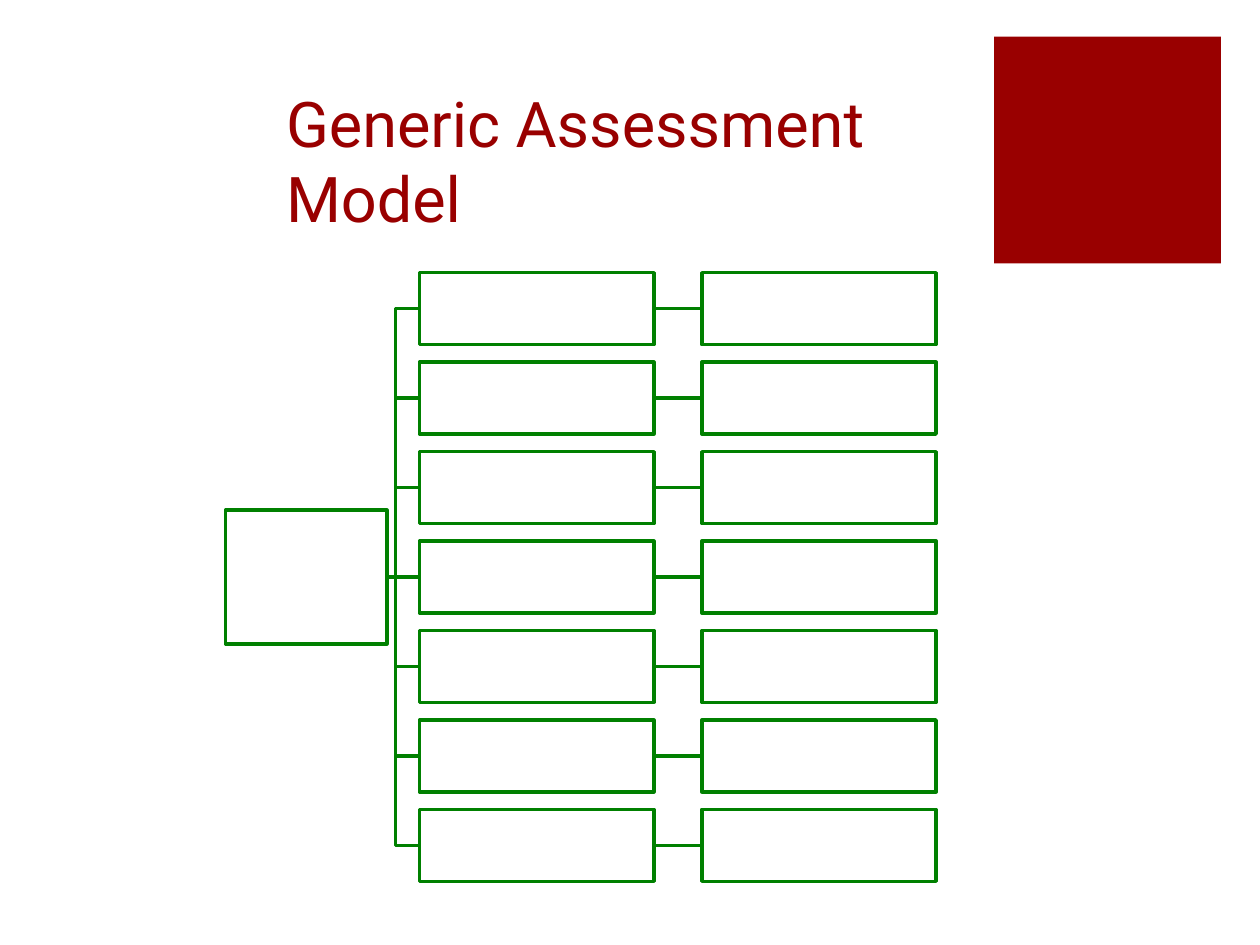
from pptx import Presentation
from pptx.dml.color import RGBColor
from pptx.enum.shapes import MSO_CONNECTOR, MSO_SHAPE
from pptx.enum.text import MSO_ANCHOR, MSO_AUTO_SIZE, PP_ALIGN
from pptx.oxml.ns import qn
from pptx.util import Inches, Pt
from lxml import etree

RECTANGLE = MSO_SHAPE.RECTANGLE
STRAIGHT = MSO_CONNECTOR.STRAIGHT
BOTTOM = MSO_ANCHOR.BOTTOM
LEFT = PP_ALIGN.LEFT
NO_AUTOFIT = MSO_AUTO_SIZE.NONE

COLORS = {"accent": "990000", "outline": "008000", "paper": "FFFFFF"}
FONT = "Roboto"
LINE_WIDTH = 2
TITLE_ONLY = 5

ROWS = 7
FIRST_CENTER, ROW_PITCH = 2.45, 0.71
BOX_WIDTH, BOX_HEIGHT = 1.86, 0.57
FIRST_COLUMN, SECOND_COLUMN = 3.33, 5.57
ROOT_LEFT, ROOT_WIDTH, ROOT_HEIGHT = 1.79, 1.28, 1.06
BRANCH_START, TRUNK = 2.96, 3.14


def color(name):
    return RGBColor.from_string(COLORS[name])


def write_text(frame, text, size=18, fill="accent", align=LEFT, anchor=BOTTOM):
    frame.word_wrap = True
    frame.auto_size = NO_AUTOFIT
    frame.vertical_anchor = anchor
    para = frame.paragraphs[0]
    para.alignment = align
    span = para.add_run()
    span.text = text
    span.font.name = FONT
    span.font.size = Pt(size)
    span.font.color.rgb = color(fill)


class Page:
    """Holds the line style and the slide being drawn."""

    def __init__(self, deck):
        self.slide = deck.slides.add_slide(deck.slide_layouts[TITLE_ONLY])
        self.shapes = self.slide.shapes

    def outline(self, shape):
        shape.line.color.rgb = color("outline")
        shape.line.width = Pt(LINE_WIDTH)

    def title(self, text, left, top, width, height):
        box = self.shapes.title
        box.left, box.top = Inches(left), Inches(top)
        box.width, box.height = Inches(width), Inches(height)
        write_text(box.text_frame, text, size=36)

    def rectangle(self, left, top, width, height, fill="paper", outlined=True):
        box = self.shapes.add_shape(
            RECTANGLE, Inches(left), Inches(top), Inches(width), Inches(height))
        box.shadow.inherit = False
        box.fill.solid()
        box.fill.fore_color.rgb = color(fill)
        if outlined:
            self.outline(box)
        else:
            box.line.fill.background()

    def straight_line(self, start, end, y):
        line = self.shapes.add_connector(
            STRAIGHT, Inches(start), Inches(y), Inches(end), Inches(y))
        etree.SubElement(line._element.spPr, qn("a:effectLst"))
        self.outline(line)

    def branch(self, start_y, end_y):
        """Draw an elbow from the root box over the trunk to a row."""
        corners = [(TRUNK, start_y), (TRUNK, end_y), (FIRST_COLUMN, end_y)]
        builder = self.shapes.build_freeform(Inches(BRANCH_START), Inches(start_y))
        builder.add_line_segments(
            [(Inches(x), Inches(y)) for x, y in corners], close=False)
        elbow = builder.convert_to_shape()
        elbow.shadow.inherit = False
        elbow.fill.background()
        self.outline(elbow)


def main():
    deck = Presentation()
    deck.slide_width, deck.slide_height = Inches(10), Inches(7.5)
    page = Page(deck)
    page.rectangle(7.89, 0.29, 1.8, 1.8, fill="accent", outlined=False)
    page.title("Generic Assessment Model", 2.17, 0.41, 5.08, 1.51)

    centers = [FIRST_CENTER + row * ROW_PITCH for row in range(ROWS)]
    root_center = centers[ROWS // 2]
    for center in reversed(centers):
        page.straight_line(FIRST_COLUMN + BOX_WIDTH, SECOND_COLUMN, center)
        if center == root_center:
            page.straight_line(BRANCH_START, FIRST_COLUMN, center)
        else:
            page.branch(root_center, center)

    page.rectangle(ROOT_LEFT, root_center - ROOT_HEIGHT / 2, ROOT_WIDTH, ROOT_HEIGHT)
    for center in centers:
        for left in (FIRST_COLUMN, SECOND_COLUMN):
            page.rectangle(left, center - BOX_HEIGHT / 2, BOX_WIDTH, BOX_HEIGHT)

    deck.save("out.pptx")


if __name__ == "__main__":
    main()
